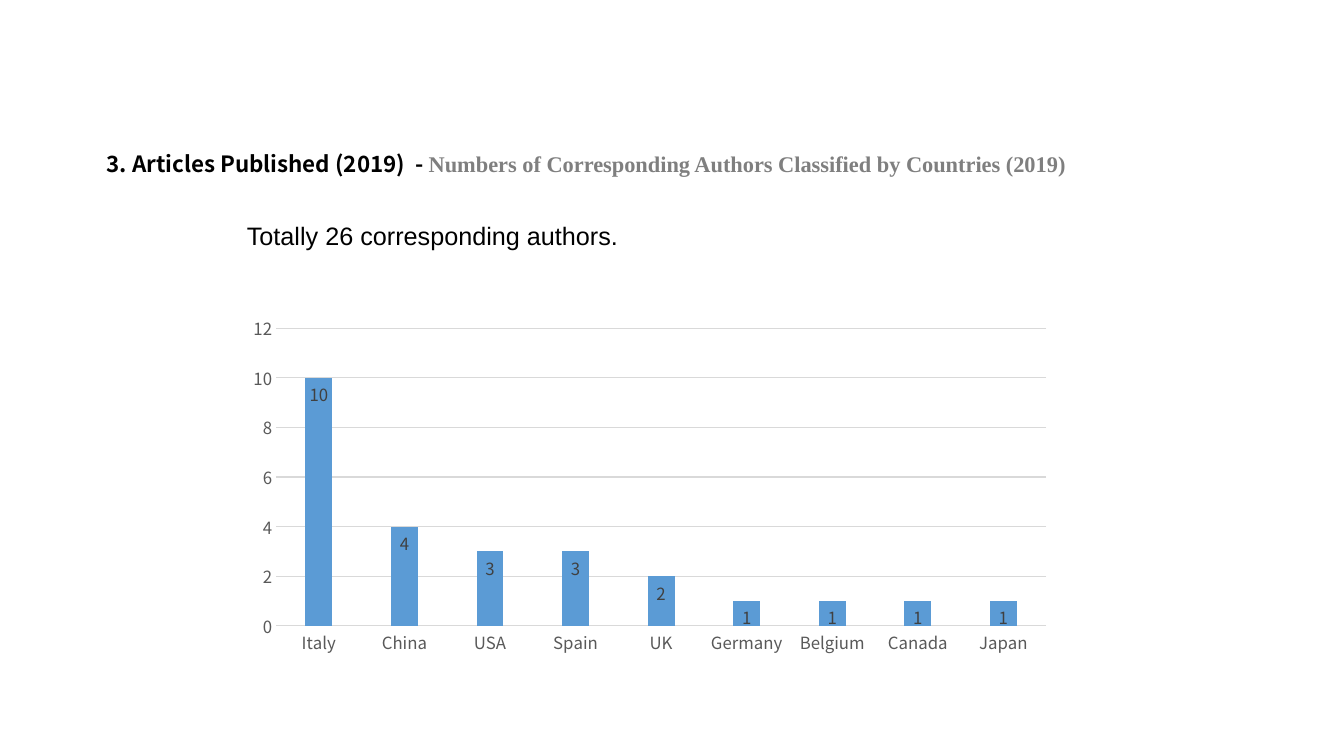
import dataclasses

import pptx
import pptx.chart.data
import pptx.dml.color
import pptx.enum.chart
import pptx.enum.text
import pptx.util

EMU_PER_PX = 9144
COLORS = {
    "black": "000000",
    "subtitle": "7F7F7F",
    "axis_text": "595959",
    "grid": "D9D9D9",
    "bar": "5B9BD5",
    "label": "404040",
}
SANS = "Noto Sans CJK SC"
AUTHORS_BY_COUNTRY = {
    "Italy": 10,
    "China": 4,
    "USA": 3,
    "Spain": 3,
    "UK": 2,
    "Germany": 1,
    "Belgium": 1,
    "Canada": 1,
    "Japan": 1,
}


@dataclasses.dataclass(frozen=True)
class Box:
    left: int
    top: int
    width: int
    height: int

    def emu(self) -> list[int]:
        return [px(value) for value in dataclasses.astuple(self)]


@dataclasses.dataclass(frozen=True)
class TextRun:
    text: str
    font: str
    size: int
    color: str
    bold: bool = False


@dataclasses.dataclass(frozen=True)
class TextBlock:
    box: Box
    runs: tuple[TextRun, ...]
    wrap: bool


TEXT_BLOCKS = (
    TextBlock(
        Box(96, 144, 1030, 37),
        (
            TextRun("3. Articles Published (2019)  - ", SANS, 16, "black", True),
            TextRun(
                "Numbers of Corresponding Authors Classified by Countries (2019)",
                "Times New Roman", 16, "subtitle", True,
            ),
        ),
        True,
    ),
    TextBlock(
        Box(235, 214, 392, 40),
        (TextRun("Totally 26 corresponding authors.", "Arial", 18, "black"),),
        False,
    ),
)
CHART_BOX = Box(235, 306, 819, 351)


def px(value: int) -> pptx.util.Emu:
    return pptx.util.Emu(value * EMU_PER_PX)


def rgb(name: str) -> pptx.dml.color.RGBColor:
    return pptx.dml.color.RGBColor.from_string(COLORS[name])


def style_font(font, name: str, size: int, color: str, bold: bool = False) -> None:
    font.name = name
    font.size = pptx.util.Pt(size)
    font.bold = bold
    font.color.rgb = rgb(color)


def style_line(line) -> None:
    line.color.rgb = rgb("grid")
    line.width = pptx.util.Pt(0.75)


def add_text(slide, block: TextBlock) -> None:
    text_frame = slide.shapes.add_textbox(*block.box.emu()).text_frame
    text_frame.word_wrap = block.wrap
    text_frame.auto_size = pptx.enum.text.MSO_AUTO_SIZE.SHAPE_TO_FIT_TEXT
    for text_run in block.runs:
        run = text_frame.paragraphs[0].add_run()
        run.text = text_run.text
        style_font(run.font, text_run.font, text_run.size, text_run.color, text_run.bold)


def add_country_chart(slide) -> None:
    chart_data = pptx.chart.data.CategoryChartData()
    chart_data.categories = list(AUTHORS_BY_COUNTRY)
    chart_data.add_series("Series 1", list(AUTHORS_BY_COUNTRY.values()))
    chart = slide.shapes.add_chart(
        pptx.enum.chart.XL_CHART_TYPE.COLUMN_CLUSTERED, *CHART_BOX.emu(), chart_data
    ).chart
    chart.has_title = False
    chart.has_legend = False
    style_font(chart.font, SANS, 10, "black")

    for axis in (chart.category_axis, chart.value_axis):
        axis.major_tick_mark = pptx.enum.chart.XL_TICK_MARK.NONE
        axis.minor_tick_mark = pptx.enum.chart.XL_TICK_MARK.NONE
        style_font(axis.tick_labels.font, SANS, 12, "axis_text")
    style_line(chart.category_axis.format.line)
    chart.value_axis.format.line.fill.background()
    chart.value_axis.has_major_gridlines = True
    style_line(chart.value_axis.major_gridlines.format.line)

    plot = chart.plots[0]
    plot.gap_width = 219
    plot.overlap = -27
    plot.vary_by_categories = False
    series = plot.series[0]
    series.format.fill.solid()
    series.format.fill.fore_color.rgb = rgb("bar")
    labels = series.data_labels
    labels.show_value = True
    labels.position = pptx.enum.chart.XL_LABEL_POSITION.INSIDE_END
    style_font(labels.font, SANS, 12, "label")


def main() -> None:
    presentation = pptx.Presentation()
    presentation.slide_width = px(1333)
    presentation.slide_height = px(750)
    slide = presentation.slides.add_slide(presentation.slide_layouts[6])
    add_country_chart(slide)
    for block in TEXT_BLOCKS:
        add_text(slide, block)
    presentation.save("out.pptx")


if __name__ == "__main__":
    main()
